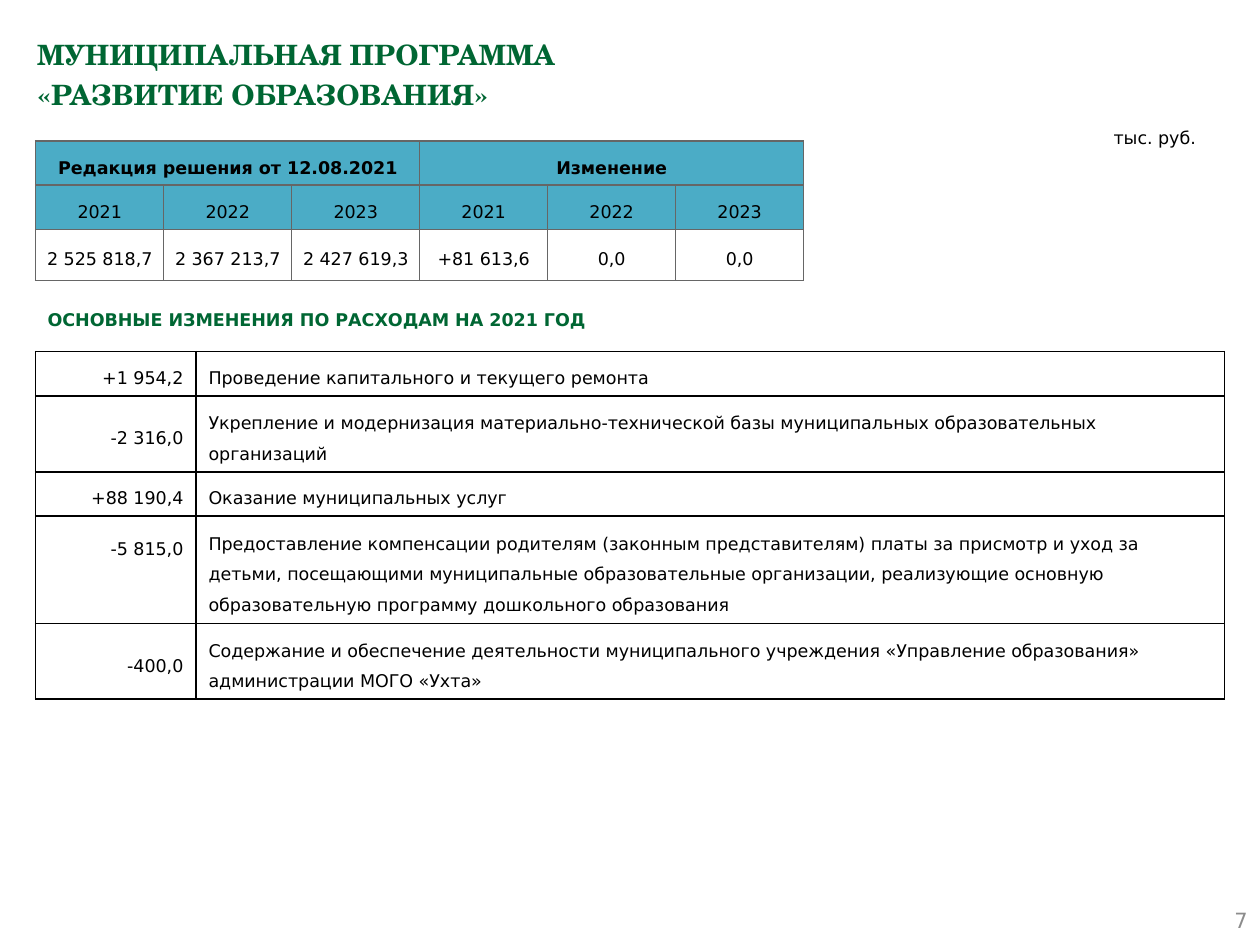
"""Build the education programme budget slide."""
from pptx import Presentation
from pptx.dml.color import RGBColor
from pptx.enum.shapes import MSO_SHAPE
from pptx.enum.text import MSO_ANCHOR, PP_ALIGN
from pptx.oxml.ns import qn
from pptx.util import Cm, Pt
from lxml.etree import SubElement

GREEN = RGBColor(0x00, 0x66, 0x33)
BLACK = RGBColor(0x00, 0x00, 0x00)
TEAL = RGBColor(0x4B, 0xAC, 0xC6)
GRAY = RGBColor(0x66, 0x66, 0x66)
PALE = RGBColor(0x8C, 0x8C, 0x8C)
SANS, SERIF = "DejaVu Sans", "TeX Gyre Schola"
LEFT, MID, RIGHT = PP_ALIGN.LEFT, PP_ALIGN.CENTER, PP_ALIGN.RIGHT

TITLE = "МУНИЦИПАЛЬНАЯ ПРОГРАММА \v«РАЗВИТИЕ ОБРАЗОВАНИЯ»"
HEADING = "ОСНОВНЫЕ ИЗМЕНЕНИЯ ПО РАСХОДАМ НА 2021 ГОД"
YEARS = ["2021", "2022", "2023"]
TOTALS = [
    ["Редакция решения от 12.08.2021", "", "", "Изменение", "", ""],
    YEARS * 2,
    ["2 525 818,7", "2 367 213,7", "2 427 619,3", "+81 613,6", "0,0", "0,0"],
]
CHANGES = [
    ("+1 954,2", "Проведение капитального и текущего ремонта"),
    ("-2 316,0", "Укрепление и модернизация материально-технической базы "
     "муниципальных образовательных организаций"),
    ("+88 190,4", "Оказание муниципальных услуг"),
    ("-5 815,0", "Предоставление компенсации родителям (законным представителям) "
     "платы за присмотр и уход за детьми, посещающими муниципальные образовательные "
     "организации, реализующие основную образовательную программу дошкольного "
     "образования"),
    ("-400,0", "Содержание и обеспечение деятельности муниципального учреждения "
     "«Управление образования» администрации МОГО «Ухта»"),
]


def write(frame, text, size=10, color=BLACK, bold=False, face=SANS,
          align=LEFT, space=1.0):
    frame.text = text
    par = frame.paragraphs[0]
    par.alignment, par.line_spacing = align, space
    font = par.font
    font.name, font.size, font.bold = face, Pt(size), bold
    font.color.rgb = color


def add_text(slide, box, text, anchor=MSO_ANCHOR.TOP, **style):
    frame = slide.shapes.add_textbox(*map(Cm, box)).text_frame
    frame.word_wrap, frame.vertical_anchor = True, anchor
    write(frame, text, **style)


def set_edge(cell, side, color, width=1):
    props = cell._tc.get_or_add_tcPr()
    line = SubElement(props, qn(f"a:ln{side}"), w=str(Pt(width)))
    fill = SubElement(line, qn("a:solidFill"))
    SubElement(fill, qn("a:srgbClr"), val=str(color))


def add_grid(slide, left, top, cols, rows):
    shape = slide.shapes.add_table(len(rows), len(cols), Cm(left), Cm(top),
                                   Cm(sum(cols)), Cm(sum(rows)))
    table = shape.table
    table.first_row = table.horz_banding = False
    for col, width in zip(table.columns, cols):
        col.width = Cm(width)
    for row, height in zip(table.rows, rows):
        row.height = Cm(height)
    return table


def fill_cell(cell, text, edge, fill=None, thin="", **style):
    for side in "LRTB":
        set_edge(cell, side, edge, 0.5 if side in thin else 1)
    if fill is None:
        cell.fill.background()
    else:
        cell.fill.solid()
        cell.fill.fore_color.rgb = fill
    cell.vertical_anchor = MSO_ANCHOR.MIDDLE
    if text:
        write(cell.text_frame, text, space=1.5, **style)


def add_totals(slide):
    table = add_grid(slide, 0.72, 2.84, [2.58] * 6, [0.89, 0.89, 1.03])
    for r, row in enumerate(TOTALS):
        for c, text in enumerate(row):
            cell = table.cell(r, c)
            cell.margin_left = cell.margin_right = Cm(0.13)
            fill_cell(cell, text, GRAY, TEAL if r < 2 else None,
                      bold=r == 0, align=MID)
    for c in (0, 3):
        table.cell(0, c).merge(table.cell(0, c + 2))


def add_changes(slide):
    table = add_grid(slide, 0.72, 7.09, [3.23, 20.73],
                     [0.89, 1.53, 0.89, 2.16, 1.53])
    for r, row in enumerate(CHANGES):
        thin = {3: "B", 4: "T"}.get(r, "")
        for c, text in enumerate(row):
            fill_cell(table.cell(r, c), text, BLACK, thin=thin,
                      align=LEFT if c else RIGHT)
    table.cell(3, 0).margin_bottom = Cm(1.13)


def add_heading(slide):
    shape = slide.shapes.add_shape(MSO_SHAPE.PENTAGON, Cm(0.71), Cm(5.9),
                                   Cm(13.5), Cm(1.1))
    shape.adjustments[0] = 0
    shape.shadow.inherit = False
    shape.fill.background()
    shape.line.fill.background()
    shape.text_frame.vertical_anchor = MSO_ANCHOR.MIDDLE
    write(shape.text_frame, HEADING, color=GREEN, bold=True)


def main():
    deck = Presentation()
    deck.slide_width, deck.slide_height = Cm(25.4), Cm(19.05)
    slide = deck.slides.add_slide(deck.slide_layouts[6])
    add_text(slide, (0.5, 0.5, 24.4, 2), TITLE, size=16, color=GREEN,
             bold=True, face=SERIF, space=1.2)
    add_text(slide, (19.48, 18.03, 5.92, 1.02), "7", MSO_ANCHOR.MIDDLE,
             size=12, color=PALE, align=RIGHT)
    add_heading(slide)
    add_text(slide, (22.2, 2.36, 2.56, 0.76), "тыс. руб.", space=1.2)
    add_totals(slide)
    add_changes(slide)
    deck.save("out.pptx")


if __name__ == "__main__":
    main()
